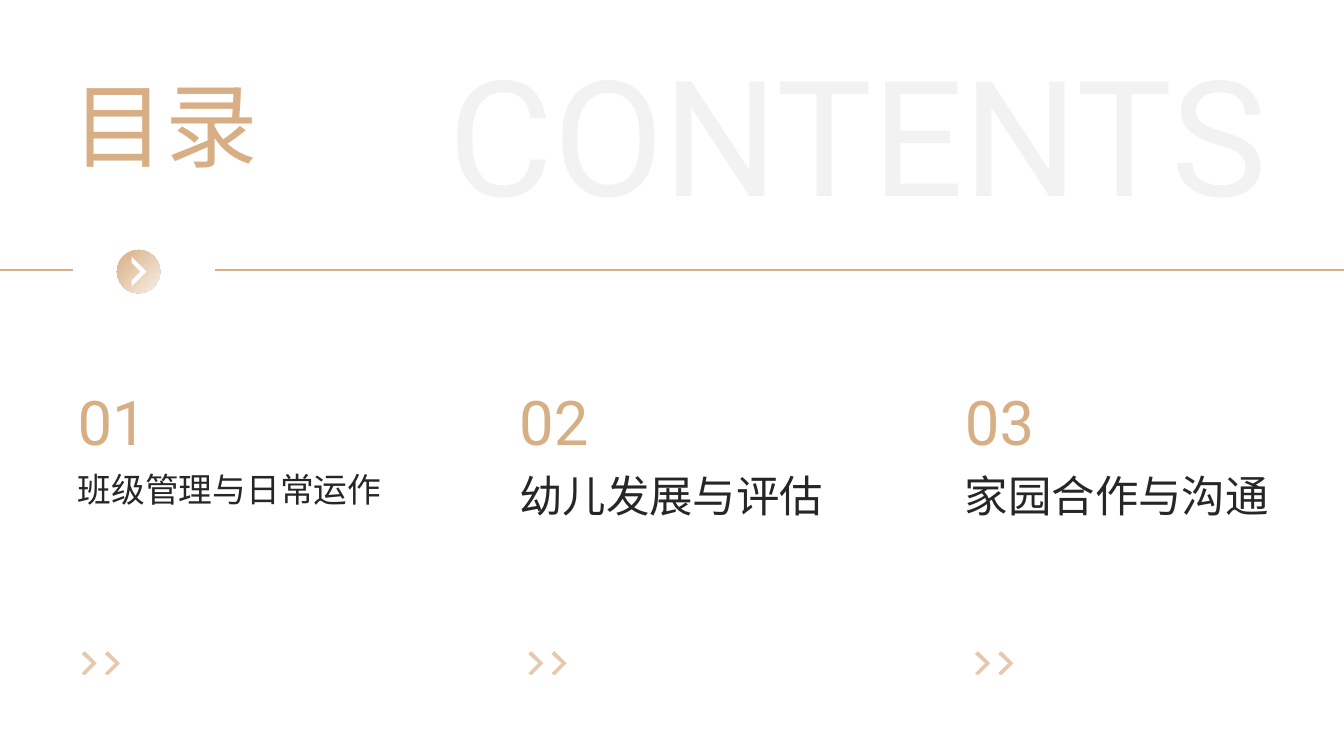
from lxml import etree
from pptx import Presentation
from pptx.dml.color import RGBColor
from pptx.enum.shapes import MSO_CONNECTOR, MSO_SHAPE
from pptx.enum.text import MSO_ANCHOR
from pptx.oxml.ns import qn
from pptx.util import Inches, Pt

STRAIGHT = MSO_CONNECTOR.STRAIGHT
OVAL, FRAME = MSO_SHAPE.OVAL, MSO_SHAPE.HALF_FRAME
TOP, MIDDLE, BOTTOM = MSO_ANCHOR.TOP, MSO_ANCHOR.MIDDLE, MSO_ANCHOR.BOTTOM
FONT = "Roboto"
COLORS = {"gold": "D8AE84", "cream": "F7EFE6", "ink": "262626",
          "pale": "F2F2F2", "white": "FFFFFF"}
TOPICS = [(0.77, 2.1, "01", "班级管理与日常运作", 24.1),
          (5.15, 2.1, "02", "幼儿发展与评估", 31),
          (9.57, 1.59, "03", "家园合作与沟通", 31)]
CHEVRON = [(0, 0.03), (0.03, 0), (0.15, 0.12),
           (0.03, 0.24), (0, 0.22), (0.1, 0.12)]


def rgb(name):
    """Look up a colour by name."""
    return RGBColor.from_string(COLORS[name])


def paint(fill, color, angle=None):
    """Fill with a solid colour, or fade it to cream when given an angle."""
    if angle is None:
        fill.solid()
        fill.fore_color.rgb = rgb(color)
        return
    fill.gradient()
    fill.gradient_angle = angle
    for stop, name in zip(fill.gradient_stops, (color, "cream")):
        stop.color.rgb = rgb(name)


def add_text(slide, box, text, size, color, anchor=TOP, angle=None):
    """Add a text box without margins."""
    frame = slide.shapes.add_textbox(*map(Inches, box)).text_frame
    frame.word_wrap = True
    frame.vertical_anchor = anchor
    frame.margin_left = frame.margin_right = 0
    frame.margin_top = frame.margin_bottom = 0
    run = frame.paragraphs[0].add_run()
    run.text = text
    run.font.name = FONT
    run.font.size = Pt(size)
    paint(run.font.fill, color, angle)


def add_rule(slide, start, end, y):
    """Add a horizontal gold line."""
    rule = slide.shapes.add_connector(
        STRAIGHT, Inches(start), Inches(y), Inches(end), Inches(y))
    rule.line.color.rgb = rgb("gold")
    rule.line.width = Pt(1.25)
    etree.SubElement(rule._element.spPr, qn("a:effectLst"))


def add_shape(slide, kind, box, color, angle=None):
    """Add a preset shape without outline or shadow."""
    shape = slide.shapes.add_shape(kind, *map(Inches, box))
    shape.shadow.inherit = False
    shape.line.fill.background()
    paint(shape.fill, color, angle)
    return shape


def add_badge(slide):
    """Add the round badge with its white arrow."""
    add_shape(slide, OVAL, (1.16, 2.48, 0.43, 0.43), "gold", 315)
    arrow = add_shape(slide, FRAME, (1.2, 2.59, 0.21, 0.21), "white")
    arrow.rotation = 135
    for i in range(2):
        arrow.adjustments[i] = 0.2


def add_chevrons(slide, left, top):
    """Add a pair of translucent chevrons as one outline."""
    path = None
    for shift in (0, 0.23):
        first, *rest = [(Inches(left + shift + x), Inches(top + y))
                        for x, y in CHEVRON]
        if path is None:
            path = slide.shapes.build_freeform(*first)
        else:
            path.move_to(*first)
        path.add_line_segments(rest, close=True)
    pair = path.convert_to_shape()
    pair.shadow.inherit = False
    pair.line.fill.background()
    paint(pair.fill, "gold")
    tint = pair._element.spPr.find(qn("a:solidFill"))[0]
    etree.SubElement(tint, qn("a:alpha"), val="66000")


def main():
    """Build the contents slide."""
    deck = Presentation()
    deck.slide_width, deck.slide_height = Inches(13.33), Inches(7.5)
    slide = deck.slides.add_slide(deck.slide_layouts[6])
    add_text(slide, (4.45, 0.38, 8.4, 1.87), "CONTENTS", 115, "pale", MIDDLE)
    add_rule(slide, 0, 0.72, 2.68)
    add_rule(slide, 2.13, 13.33, 2.68)
    add_text(slide, (0.72, 0.54, 2.42, 1.38), "目录", 66, "gold", MIDDLE, 180)
    for i, (left, width, number, title, size) in enumerate(TOPICS):
        add_text(slide, (left, 3.57, width, 0.97), number, 44, "gold",
                 BOTTOM, 180)
        add_text(slide, (left, 4.65, 3.02, 1.04), title, size, "ink")
        add_chevrons(slide, 0.81 + 4.43 * i, 6.46)
    add_badge(slide)
    deck.save("out.pptx")


if __name__ == "__main__":
    main()
